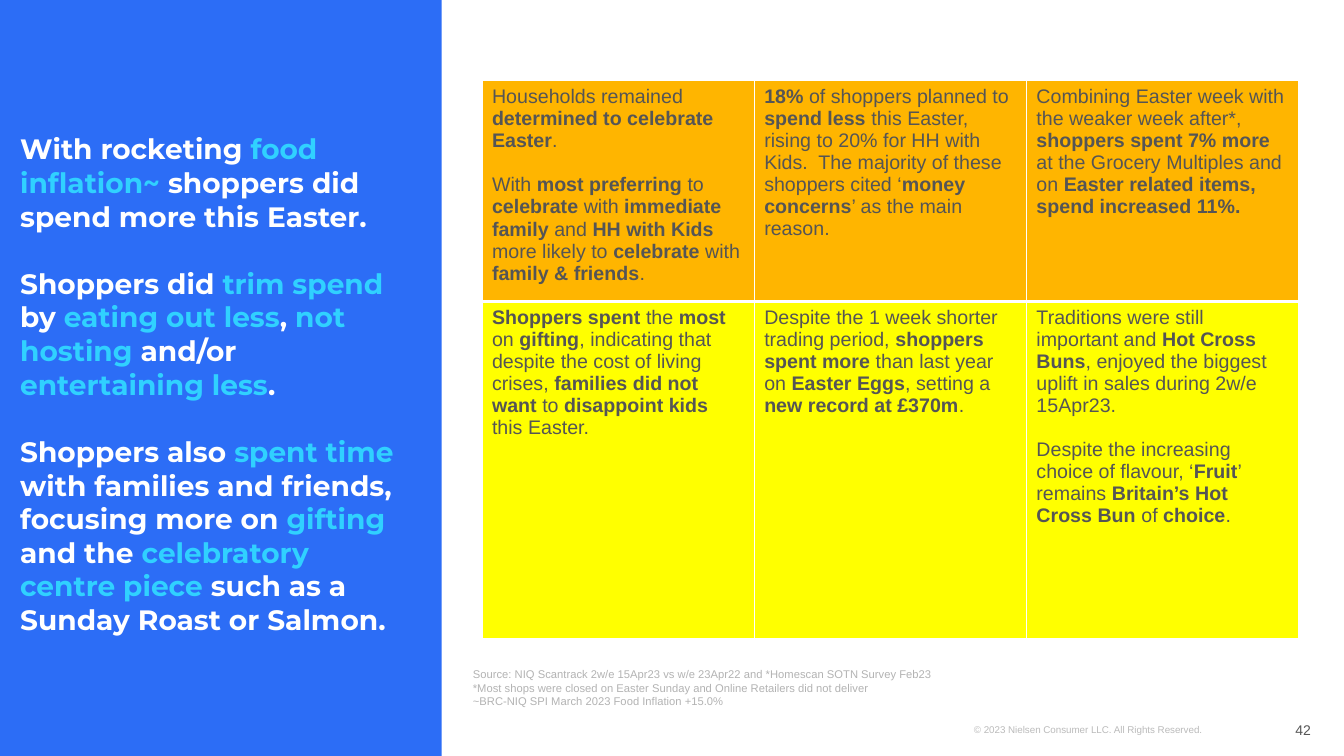
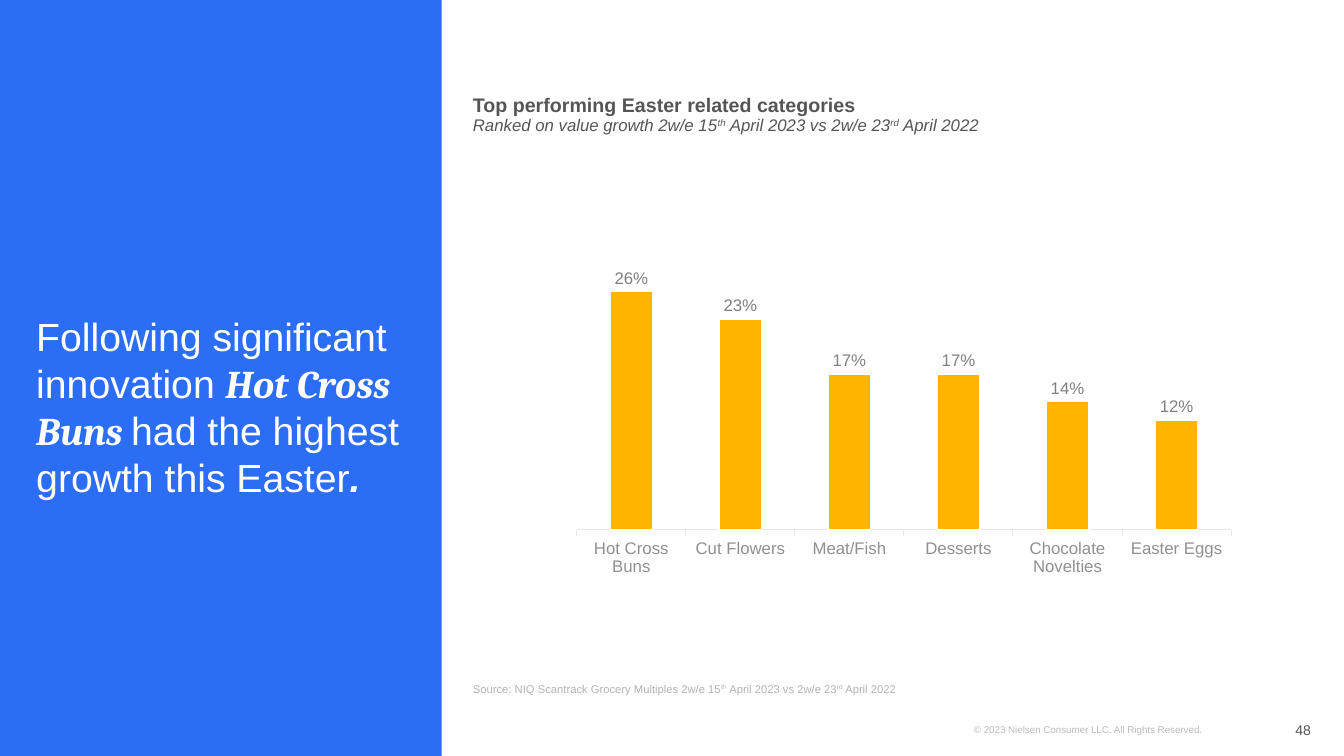
from itertools import cycle

from lxml import etree
from pptx import Presentation
from pptx.chart.data import CategoryChartData
from pptx.dml.color import RGBColor
from pptx.enum.chart import XL_CHART_TYPE, XL_LABEL_POSITION, XL_TICK_LABEL_POSITION, XL_TICK_MARK
from pptx.enum.shapes import MSO_SHAPE
from pptx.enum.text import MSO_ANCHOR, PP_ALIGN
from pptx.oxml import parse_xml
from pptx.oxml.ns import nsdecls, qn
from pptx.util import Inches, Pt

COLORS = {
    "panel": "2C6DF6", "white": "FFFFFF", "highlight": "30D1FF", "body": "555555",
    "source": "B3B3B3", "copyright": "BBBBBB", "orange": "FFB500", "yellow": "FFFF00",
    "axis_text": "909090", "axis_line": "E6E6E6", "label": "808080",
}
BODY_FONT = "Arial"
SUPERSCRIPT = ({"raised": True},)
BOLD = ({"bold": True},)

PANEL_WIDTH = 4.38
CONTENT_LEFT, CONTENT_WIDTH = 4.69, 8.31

TAKEAWAYS = [
    "With rocketing |food inflation~| shoppers did spend more this Easter.",
    "Shoppers did |trim spend| by |eating out less|, |not hosting| and/or |entertaining less|.",
    "Shoppers also |spent time |with families and friends, focusing more on |gifting| and the "
    "|celebratory centre piece |such as a Sunday Roast or Salmon.",
]
SURVEY_SOURCES = [
    "Source: NIQ Scantrack 2w/e 15Apr23 vs w/e 23Apr22 and *Homescan SOTN Survey Feb23",
    "*Most shops were closed on Easter Sunday and Online Retailers did not deliver",
    "~BRC-NIQ SPI March 2023 Food Inflation +15.0%",
]
FINDINGS = [
    [
        ["Households remained |determined to celebrate Easter|.",
         "With |most preferring |to| celebrate |with| immediate family |and |HH with Kids "
         "|more likely to |celebrate |with| family & friends|."],
        ["|18%| of shoppers planned to |spend less |this Easter, rising to 20% for HH with Kids.  "
         "The majority of these shoppers cited ‘|money concerns|’ as the main reason."],
        ["Combining Easter week with the weaker week after*, |shoppers spent 7% more "
         "|at the Grocery Multiples and on |Easter related items, spend increased 11%.|"],
    ],
    [
        ["|Shoppers spent |the| most |on| gifting|, indicating that despite the cost of living "
         "crises, |families did not want |to| disappoint kids |this Easter."],
        ["Despite the 1 week shorter trading period, |shoppers spent more |than last year on "
         "|Easter Eggs|, setting a |new record at £370m|."],
        ["Traditions were still important and |Hot Cross Buns|, enjoyed the biggest uplift in "
         "sales during 2w/e 15Apr23.",
         "Despite the increasing choice of flavour, ‘|Fruit|’ remains |Britain’s Hot Cross Bun "
         "|of| choice|."],
    ],
]
CATEGORY_GROWTH = {
    "Hot Cross Buns": 0.26, "Cut Flowers": 0.23, "Meat/Fish": 0.17,
    "Desserts": 0.17, "Chocolate Novelties": 0.14, "Easter Eggs": 0.12,
}


def rgb(name):
    return RGBColor.from_string(COLORS[name])


def style_font(font, size, color, name=BODY_FONT, bold=False, italic=False):
    font.size, font.name, font.bold, font.italic = Pt(size), name, bold, italic
    font.color.rgb = rgb(color)


def write_text(frame, paragraphs, emphasis=BOLD, gap=0, leading=None, align=PP_ALIGN.LEFT, **style):
    """Write paragraphs; parts between bars take the emphasis formats in turn."""
    formats = cycle(emphasis)
    for index, text in enumerate(paragraphs):
        paragraph = frame.add_paragraph() if index else frame.paragraphs[0]
        paragraph.alignment = align
        if index and gap:
            paragraph.space_before = Pt(gap)
        if leading:
            paragraph.line_spacing = Pt(leading)
        for position, part in enumerate(text.split("|")):
            if not part:
                continue
            run_style = {**style, **(next(formats) if position % 2 else {})}
            raised = run_style.pop("raised", False)
            run = paragraph.add_run()
            run.text = part
            style_font(run.font, **run_style)
            if raised:
                run.font._element.set("baseline", "30000")


def add_text(slide, box, paragraphs, anchor=MSO_ANCHOR.TOP, **style):
    frame = slide.shapes.add_textbox(*map(Inches, box)).text_frame
    frame.word_wrap = True
    frame.margin_left = frame.margin_right = 0
    frame.vertical_anchor = anchor
    write_text(frame, paragraphs, **style)


def add_base_slide(deck, number):
    slide = deck.slides.add_slide(deck.slide_layouts[6])
    panel = slide.shapes.add_shape(MSO_SHAPE.RECTANGLE, 0, 0, Inches(PANEL_WIDTH), deck.slide_height)
    panel.shadow.inherit = False
    panel.fill.solid()
    panel.fill.fore_color.rgb = rgb("panel")
    panel.line.fill.background()
    add_text(slide, (9.66, 7.13, 2.84, 0.22),
             ["© 2023 Nielsen Consumer LLC. All Rights Reserved."], size=7, color="copyright")
    add_text(slide, (12.01, 7.04, 0.99, 0.4), [number], anchor=MSO_ANCHOR.MIDDLE,
             align=PP_ALIGN.RIGHT, size=10, color="body")
    return slide


def add_panel_title(slide, box, paragraphs, size, **style):
    add_text(slide, box, paragraphs, anchor=MSO_ANCHOR.BOTTOM, size=size, leading=1.2 * size,
             color="white", **style)


def add_source(slide, top, lines):
    add_text(slide, (CONTENT_LEFT, top, CONTENT_WIDTH, 0.4), lines, anchor=MSO_ANCHOR.BOTTOM,
             emphasis=SUPERSCRIPT, size=8, color="source")


def set_cell_borders(cell, **widths):
    properties = cell._tc.get_or_add_tcPr()
    for index, side in enumerate("LRTB"):
        properties.insert(index, parse_xml(
            f'<a:ln{side} {nsdecls("a")} w="{Pt(widths.get(side, 1))}"><a:solidFill>'
            f'<a:srgbClr val="{COLORS["white"]}"/></a:solidFill></a:ln{side}>'))


def add_findings_table(slide, left, top, column_width, row_heights):
    table = slide.shapes.add_table(
        2, 3, Inches(left), Inches(top), Inches(3 * column_width), Inches(sum(row_heights))).table
    table.first_row = table.horz_banding = False
    for column in table.columns:
        column.width = Inches(column_width)
    row_looks = [("orange", {"B": 3}), ("yellow", {"T": 3})]
    for row, height, findings, (fill, borders) in zip(table.rows, row_heights, FINDINGS, row_looks):
        row.height = Inches(height)
        for cell, paragraphs in zip(row.cells, findings):
            cell.fill.solid()
            cell.fill.fore_color.rgb = rgb(fill)
            set_cell_borders(cell, **borders)
            write_text(cell.text_frame, paragraphs, gap=16, size=14, color="body")


def set_plot_layout(chart, **fractions):
    """Fix the inner plot area by fractions (x, y, w, h) of the chart."""
    plot_area = chart._chartSpace.chart.plotArea
    for old in plot_area.findall(qn("c:layout")):
        plot_area.remove(old)
    layout = etree.Element(qn("c:layout"))
    manual = etree.SubElement(layout, qn("c:manualLayout"))
    settings = {"layoutTarget": "inner", "xMode": "edge", "yMode": "edge", **fractions}
    for tag, value in settings.items():
        etree.SubElement(manual, qn(f"c:{tag}")).set("val", str(value))
    plot_area.insert(0, layout)


def add_growth_chart(slide, box):
    data = CategoryChartData(number_format="0%")
    data.categories = list(CATEGORY_GROWTH)
    data.add_series("Series 1", list(CATEGORY_GROWTH.values()))
    chart = slide.shapes.add_chart(XL_CHART_TYPE.COLUMN_CLUSTERED, *map(Inches, box), data).chart
    chart.has_legend = chart.has_title = False
    style_font(chart.font, 10, "body")
    set_plot_layout(chart, x=0.17, y=0.31, w=0.73, h=0.46)

    growth_axis = chart.value_axis
    growth_axis.minimum_scale, growth_axis.maximum_scale = 0, 0.3
    growth_axis.has_major_gridlines = growth_axis.visible = False

    category_axis = chart.category_axis
    category_axis.major_tick_mark = XL_TICK_MARK.OUTSIDE
    category_axis.tick_label_position = XL_TICK_LABEL_POSITION.LOW
    category_axis.format.line.color.rgb = rgb("axis_line")
    category_axis.format.line.width = Pt(0.75)
    style_font(category_axis.tick_labels.font, 12, "axis_text")

    plot = chart.plots[0]
    plot.gap_width = 150
    plot.vary_by_categories = False
    growth = plot.series[0]
    growth.format.fill.solid()
    growth.format.fill.fore_color.rgb = rgb("orange")
    growth.format.line.color.rgb = rgb("white")
    growth.format.line.width = Pt(1.5)
    labels = growth.data_labels
    labels.show_value = True
    labels.number_format, labels.number_format_is_linked = "0%", False
    labels.position = XL_LABEL_POSITION.OUTSIDE_END
    style_font(labels.font, 12, "label")


def build_findings_slide(deck):
    slide = add_base_slide(deck, "42")
    add_panel_title(slide, (0.2, 3.75, 3.83, 2.61), TAKEAWAYS, 20, gap=24, name="Montserrat",
                    bold=True, emphasis=({"color": "highlight"},))
    add_findings_table(slide, 4.78, 0.8, 2.7, (2.09, 3.35))
    add_source(slide, 6.67, SURVEY_SOURCES)


def build_growth_slide(deck):
    slide = add_base_slide(deck, "48")
    strong = {"bold": True, "italic": True}
    add_panel_title(
        slide, (0.36, 2.29, 3.83, 2.72),
        ["Following significant innovation |Hot Cross Buns |had the highest growth this Easter|.|"],
        28, emphasis=({**strong, "name": "Cambria"}, strong))
    add_growth_chart(slide, (4.21, 0.69, 8.89, 5.93))
    add_text(slide, (CONTENT_LEFT, 0.87, CONTENT_WIDTH, 0.3),
             ["Top performing Easter related categories"], size=14, color="body", bold=True)
    add_text(slide, (CONTENT_LEFT, 1.09, CONTENT_WIDTH, 0.3),
             ["Ranked on value growth 2w/e 15|th| April 2023 vs 2w/e 23|rd| April 2022"],
             emphasis=SUPERSCRIPT, size=12, color="body", italic=True)
    add_source(slide, 6.55, ["Source: NIQ Scantrack Grocery Multiples 2w/e 15|th| April 2023 "
                             "vs 2w/e 23|rd| April 2022"])


def main():
    deck = Presentation()
    deck.slide_width, deck.slide_height = Inches(13.33), Inches(7.5)
    build_findings_slide(deck)
    build_growth_slide(deck)
    deck.save("out.pptx")


if __name__ == "__main__":
    main()
